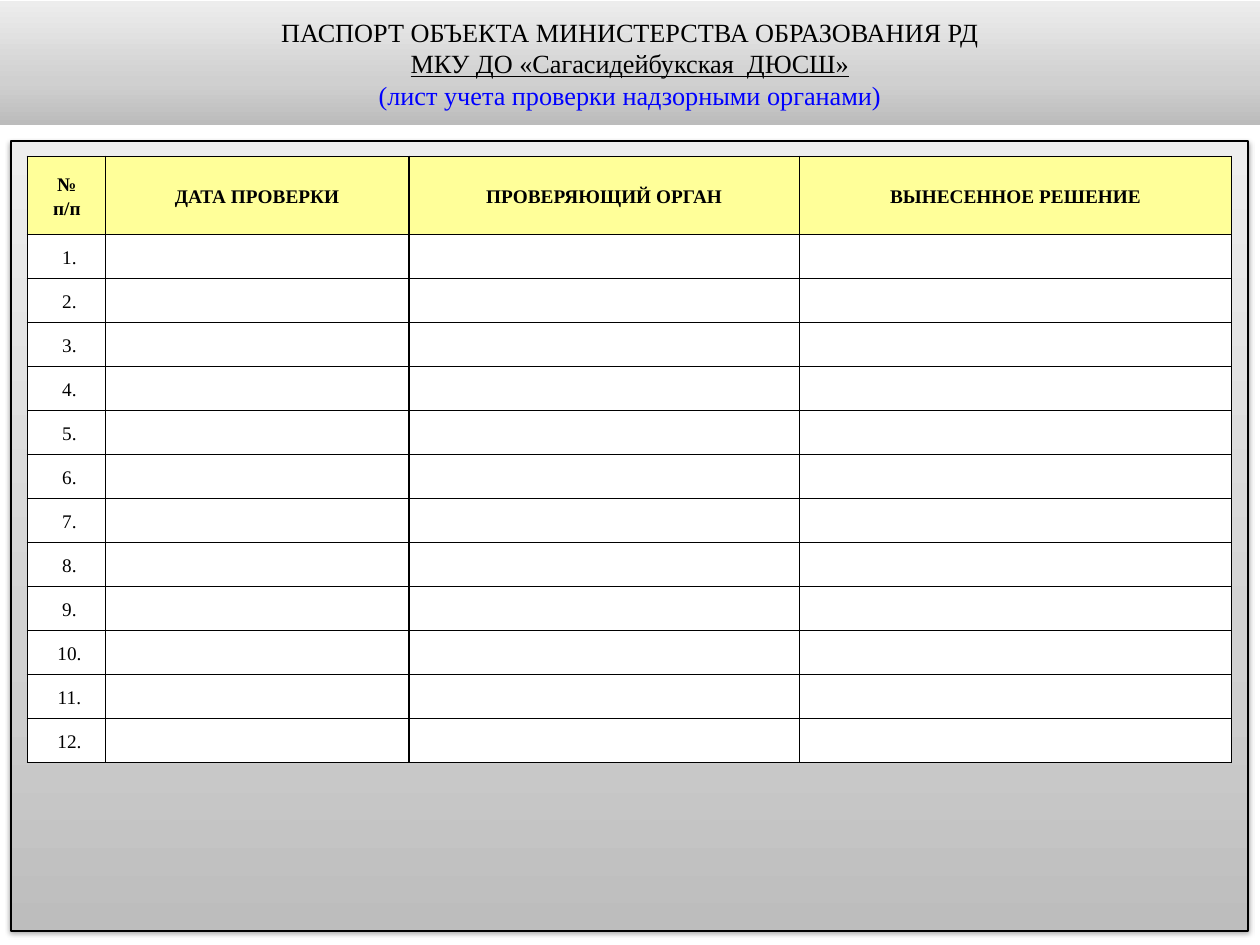
from lxml import etree
from pptx import Presentation
from pptx.dml.color import RGBColor
from pptx.enum.shapes import MSO_SHAPE
from pptx.enum.text import MSO_ANCHOR, PP_ALIGN
from pptx.oxml import parse_xml
from pptx.oxml.ns import nsdecls, qn
from pptx.util import Pt

RECTANGLE = MSO_SHAPE.RECTANGLE
MIDDLE = MSO_ANCHOR.MIDDLE
CENTER = PP_ALIGN.CENTER

FONT = "Times New Roman"
COLORS = {"black": "000000", "blue": "0000FF", "header": "FFFF99", "cell": "FFFFFF"}
BANNER_GRADIENT = [(0, "BCBCBC"), (35, "D0D0D0"), (100, "EDEDED")]
PANEL_GRADIENT = [(0, "BDBDBD"), (35, "D1D1D1"), (100, "EEEEEE")]

# text, color, underlined
TITLE_LINES = [
    ("ПАСПОРТ ОБЪЕКТА МИНИСТЕРСТВА ОБРАЗОВАНИЯ РД", "black", False),
    ("МКУ ДО «Сагасидейбукская  ДЮСШ»", "black", True),
    ("(лист учета проверки надзорными органами)", "blue", False),
]
# text, column width, line spacing, left indent
COLUMNS = [
    ("№\nп/п", 44.6, 1.15, 0.7),
    ("ДАТА ПРОВЕРКИ", 173.5, 1.15, 0),
    ("ПРОВЕРЯЮЩИЙ ОРГАН", 223.2, Pt(14), 0),
    ("ВЫНЕСЕННОЕ РЕШЕНИЕ", 247, 1.15, 0),
]
ROW_COUNT = 12
HEADER_HEIGHT, ROW_HEIGHT = 44.6, 25.16
NUMBER_INDENT = 3.6


def add_gradient_rectangle(slide, box, stops):
    shape = slide.shapes.add_shape(RECTANGLE, *map(Pt, box))
    shape.shadow.inherit = False
    shape.fill.gradient()
    shape.fill.gradient_angle = 90
    stop_list = shape._element.spPr.find(qn("a:gradFill")).find(qn("a:gsLst"))
    for stop in list(stop_list):
        stop_list.remove(stop)
    for position, color in stops:
        stop = etree.SubElement(stop_list, qn("a:gs"), pos=str(position * 1000))
        etree.SubElement(stop, qn("a:srgbClr"), val=color)
    return shape


def add_shadow(shape):
    effects = shape._element.spPr.find(qn("a:effectLst"))
    effects.append(parse_xml(
        f'<a:outerShdw {nsdecls("a")} blurRad="{Pt(3.1)}" dist="{Pt(1.6)}" dir="5400000" '
        'rotWithShape="0"><a:srgbClr val="000000"><a:alpha val="38000"/></a:srgbClr>'
        '</a:outerShdw>'))


def format_paragraph(paragraph, size, color, bold=False, underline=False):
    paragraph.alignment = CENTER
    for run in paragraph.runs:
        font = run.font
        font.name, font.size, font.bold = FONT, Pt(size), bold
        font.underline = underline
        font.color.rgb = RGBColor.from_string(COLORS[color])


def format_cell(cell, fill):
    cell.margin_left = cell.margin_right = Pt(2.2)
    cell.margin_top = cell.margin_bottom = 0
    cell.vertical_anchor = MIDDLE
    properties = cell._tc.get_or_add_tcPr()
    for side in ("lnL", "lnR", "lnT", "lnB"):
        properties.append(parse_xml(
            f'<a:{side} {nsdecls("a")} w="{Pt(1)}"><a:solidFill>'
            f'<a:srgbClr val="{COLORS["black"]}"/></a:solidFill></a:{side}>'))
    cell.fill.solid()
    cell.fill.fore_color.rgb = RGBColor.from_string(COLORS[fill])


def write_cell(cell, text, spacing, indent, bold):
    cell.text_frame.text = text
    for paragraph in cell.text_frame.paragraphs:
        format_paragraph(paragraph, 11, "black", bold)
        paragraph.line_spacing = spacing
        paragraph._p.get_or_add_pPr().set("marL", str(Pt(indent)))


def add_title(slide):
    banner = add_gradient_rectangle(slide, (0, 0.7, 720, 70.6), BANNER_GRADIENT)
    banner.line.fill.background()
    frame = banner.text_frame
    frame.word_wrap = True
    frame.vertical_anchor = MIDDLE
    frame.text = "\n".join(text for text, _, _ in TITLE_LINES)
    for paragraph, (_, color, underline) in zip(frame.paragraphs, TITLE_LINES):
        format_paragraph(paragraph, 15, color, underline=underline)


def add_panel(slide):
    panel = add_gradient_rectangle(slide, (6.2, 80.6, 707, 451.4), PANEL_GRADIENT)
    panel.line.color.rgb = RGBColor.from_string(COLORS["black"])
    panel.line.width = Pt(0.75)
    add_shadow(panel)


def add_inspection_table(slide):
    width = sum(column[1] for column in COLUMNS)
    height = HEADER_HEIGHT + ROW_COUNT * ROW_HEIGHT
    table = slide.shapes.add_table(
        ROW_COUNT + 1, len(COLUMNS), Pt(15.6), Pt(89.4), Pt(width), Pt(height)).table
    for row_index, row in enumerate(table.rows):
        row.height = Pt(ROW_HEIGHT if row_index else HEADER_HEIGHT)
        for cell in row.cells:
            format_cell(cell, "cell" if row_index else "header")
    for index, (text, column_width, spacing, indent) in enumerate(COLUMNS):
        table.columns[index].width = Pt(column_width)
        write_cell(table.cell(0, index), text, spacing, indent, True)
    for number in range(1, ROW_COUNT + 1):
        write_cell(table.cell(number, 0), f"{number}.", 1.15, NUMBER_INDENT, False)


def main():
    presentation = Presentation()
    presentation.slide_width, presentation.slide_height = Pt(720), Pt(540)
    slide = presentation.slides.add_slide(presentation.slide_layouts[6])
    add_title(slide)
    add_panel(slide)
    add_inspection_table(slide)
    presentation.save("out.pptx")


if __name__ == "__main__":
    main()
